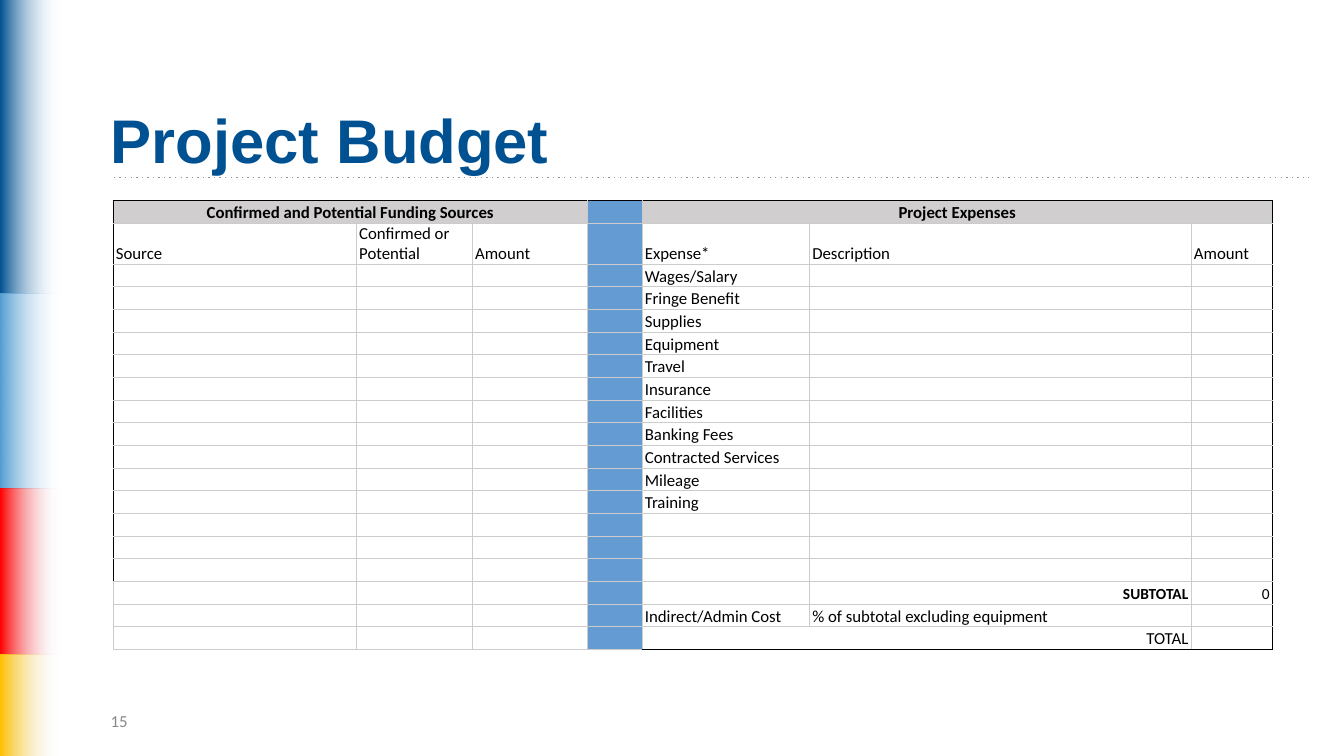
from lxml import etree
from pptx import Presentation
from pptx.dml.color import RGBColor
from pptx.enum.shapes import MSO_CONNECTOR, MSO_SHAPE
from pptx.enum.text import MSO_ANCHOR, MSO_AUTO_SIZE, PP_ALIGN
from pptx.oxml.ns import qn
from pptx.util import Pt

STRAIGHT = MSO_CONNECTOR.STRAIGHT
RECTANGLE = MSO_SHAPE.RECTANGLE
BOTTOM, MIDDLE = MSO_ANCHOR.BOTTOM, MSO_ANCHOR.MIDDLE
NO_AUTOFIT = MSO_AUTO_SIZE.NONE
LEFT, CENTER, RIGHT = PP_ALIGN.LEFT, PP_ALIGN.CENTER, PP_ALIGN.RIGHT

NAVY = RGBColor(0x00, 0x51, 0x91)
SKY = RGBColor(0x53, 0x9E, 0xD0)
RED = RGBColor(0xFF, 0x00, 0x00)
GOLD = RGBColor(0xFF, 0xC0, 0x00)
PALE = RGBColor(0xEC, 0xF4, 0xFF)
RULE_GRAY = RGBColor(0x92, 0x94, 0x98)
NUMBER_GRAY = RGBColor(0x88, 0x88, 0x88)
HEADER_GRAY = RGBColor(0xD0, 0xCE, 0xCE)
GRID_GRAY = RGBColor(0xCC, 0xCC, 0xCC)
DIVIDER_BLUE = RGBColor(0x64, 0x9B, 0xD3)
BLACK = RGBColor(0x00, 0x00, 0x00)

# Side bands: colour and height, from top to bottom
BANDS = [(NAVY, 209.5), (SKY, 139.7), (RED, 118.1), (GOLD, 72.7)]
BAND_WIDTH = 42.5

# Budget table
COLUMN_WIDTHS = [173.8, 82.8, 82.4, 38.9, 119.6, 272.6, 58.0]
ROW_HEIGHT, LABEL_ROW_HEIGHT = 16.2, 29.3
DIVIDER_COLUMN = 3
EXPENSE_COLUMN = 4
FUNDING_LAST_ROW = 15
EXPENSES = ["Wages/Salary", "Fringe Benefit", "Supplies", "Equipment",
            "Travel", "Insurance", "Facilities", "Banking Fees",
            "Contracted Services", "Mileage", "Training"]
BUDGET_ROWS = [
    ["Confirmed and Potential Funding Sources", "", "", "", "Project Expenses", "", ""],
    ["Source", "Confirmed or Potential", "Amount", "", "Expense*", "Description", "Amount"],
    *[["", "", "", "", expense, "", ""] for expense in EXPENSES + [""] * 3],
    ["", "", "", "", "", "SUBTOTAL", "0"],
    ["", "", "", "", "Indirect/Admin Cost", "% of subtotal excluding equipment", ""],
    ["", "", "", "", "TOTAL", "", ""],
]
LAST_ROW, LAST_COLUMN = len(BUDGET_ROWS) - 1, len(COLUMN_WIDTHS) - 1
SUBTOTAL_ROW = LAST_ROW - 2


def style_run(run, font_name, size, color, bold=False):
    run.font.name = font_name
    run.font.size = Pt(size)
    run.font.color.rgb = color
    run.font.bold = bold


def add_band(slide, top, height, color):
    band = slide.shapes.add_shape(RECTANGLE, 0, Pt(top), Pt(BAND_WIDTH), Pt(height))
    band.shadow.inherit = False
    band.line.fill.background()
    band.fill.gradient()
    band.fill.gradient_angle = 180
    clear_stop, solid_stop = band.fill.gradient_stops
    clear_stop.position, clear_stop.color.rgb = 0, PALE
    solid_stop.position, solid_stop.color.rgb = 1, color
    for pale_color in band._element.spPr.iter(qn("a:srgbClr")):
        if pale_color.get("val") == str(PALE):
            etree.SubElement(pale_color, qn("a:alpha"), val="0")


def add_title_rule(slide):
    rule = slide.shapes.add_connector(STRAIGHT, Pt(81.4), Pt(126.7), Pt(935.3), Pt(126.7))
    rule.line.color.rgb = RULE_GRAY
    rule.line.width = Pt(1)
    properties = rule._element.spPr
    etree.SubElement(properties.find(qn("a:ln")), qn("a:prstDash"), val="dot")
    etree.SubElement(properties, qn("a:effectLst"))


def set_title(slide, text):
    title = slide.shapes.title
    title.left, title.top, title.width, title.height = Pt(72), Pt(38.9), Pt(863.3), Pt(90.7)
    frame = title.text_frame
    frame.text = text
    frame.auto_size = NO_AUTOFIT
    frame.vertical_anchor = BOTTOM
    heading = frame.paragraphs[0]
    heading.alignment = LEFT
    heading.line_spacing = 0.9
    style_run(heading.runs[0], "Arial", 44, NAVY, bold=True)


def add_page_number(slide, number):
    page_number = slide.shapes.add_textbox(Pt(72), Pt(500.4), Pt(216), Pt(28.8))
    frame = page_number.text_frame
    frame.word_wrap = True
    frame.vertical_anchor = MIDDLE
    frame.text = number
    style_run(frame.paragraphs[0].runs[0], "Calibri", 12, NUMBER_GRAY)


def set_borders(cell, row, column):
    end_column = column + cell.span_width - 1
    black_edges = {
        "a:lnL": column == 0 and row <= FUNDING_LAST_ROW,
        "a:lnR": end_column == LAST_COLUMN,
        "a:lnT": row == 0,
        "a:lnB": row == LAST_ROW and column >= EXPENSE_COLUMN,
    }
    cell_properties = cell._tc.get_or_add_tcPr()
    for position, (edge, is_black) in enumerate(black_edges.items()):
        border = etree.Element(qn(edge), w=str(Pt(0.75)))
        fill = etree.SubElement(border, qn("a:solidFill"))
        etree.SubElement(fill, qn("a:srgbClr"), val=str(BLACK if is_black else GRID_GRAY))
        cell_properties.insert(position, border)


def fill_cell(cell, row, column, text):
    cell.margin_left = cell.margin_right = Pt(2)
    cell.margin_top = cell.margin_bottom = 0
    cell.vertical_anchor = BOTTOM
    if column == DIVIDER_COLUMN or row == 0:
        cell.fill.solid()
        cell.fill.fore_color.rgb = DIVIDER_BLUE if column == DIVIDER_COLUMN else HEADER_GRAY
    else:
        cell.fill.background()
    set_borders(cell, row, column)

    paragraph = cell.text_frame.paragraphs[0]
    if not text:
        # Keeps empty rows at their set height
        etree.SubElement(paragraph._p, qn("a:endParaRPr"), sz="1200")
        return
    paragraph.text = text
    if row == 0:
        paragraph.alignment = CENTER
    elif row in (SUBTOTAL_ROW, LAST_ROW):
        paragraph.alignment = RIGHT
    size = 11 if row == SUBTOTAL_ROW else 12
    style_run(paragraph.runs[0], "Calibri", size, BLACK, row == 0 or text == "SUBTOTAL")


def add_budget_table(slide):
    heights = [ROW_HEIGHT] * len(BUDGET_ROWS)
    heights[1] = LABEL_ROW_HEIGHT
    budget = slide.shapes.add_table(
        len(BUDGET_ROWS), len(COLUMN_WIDTHS), Pt(80.8), Pt(143.2),
        Pt(sum(COLUMN_WIDTHS)), Pt(sum(heights))).table
    budget.first_row = budget.horz_banding = False
    for column, width in zip(budget.columns, COLUMN_WIDTHS):
        column.width = Pt(width)
    for row, height in zip(budget.rows, heights):
        row.height = Pt(height)
    for row, first, last in [(0, 0, 2), (0, 4, 6), (LAST_ROW, 4, 5)]:
        budget.cell(row, first).merge(budget.cell(row, last))
    for row, texts in enumerate(BUDGET_ROWS):
        for column, text in enumerate(texts):
            fill_cell(budget.cell(row, column), row, column, text)


def main():
    deck = Presentation()
    deck.slide_width, deck.slide_height = Pt(960), Pt(540)
    slide = deck.slides.add_slide(deck.slide_layouts[5])

    # Side bands
    top = 0
    for color, height in BANDS:
        add_band(slide, top, height, color)
        top += height

    # Title, rule and page number
    add_title_rule(slide)
    add_page_number(slide, "15")
    set_title(slide, "Project Budget")

    # Funding sources and expenses
    add_budget_table(slide)
    deck.save("out.pptx")


if __name__ == "__main__":
    main()
